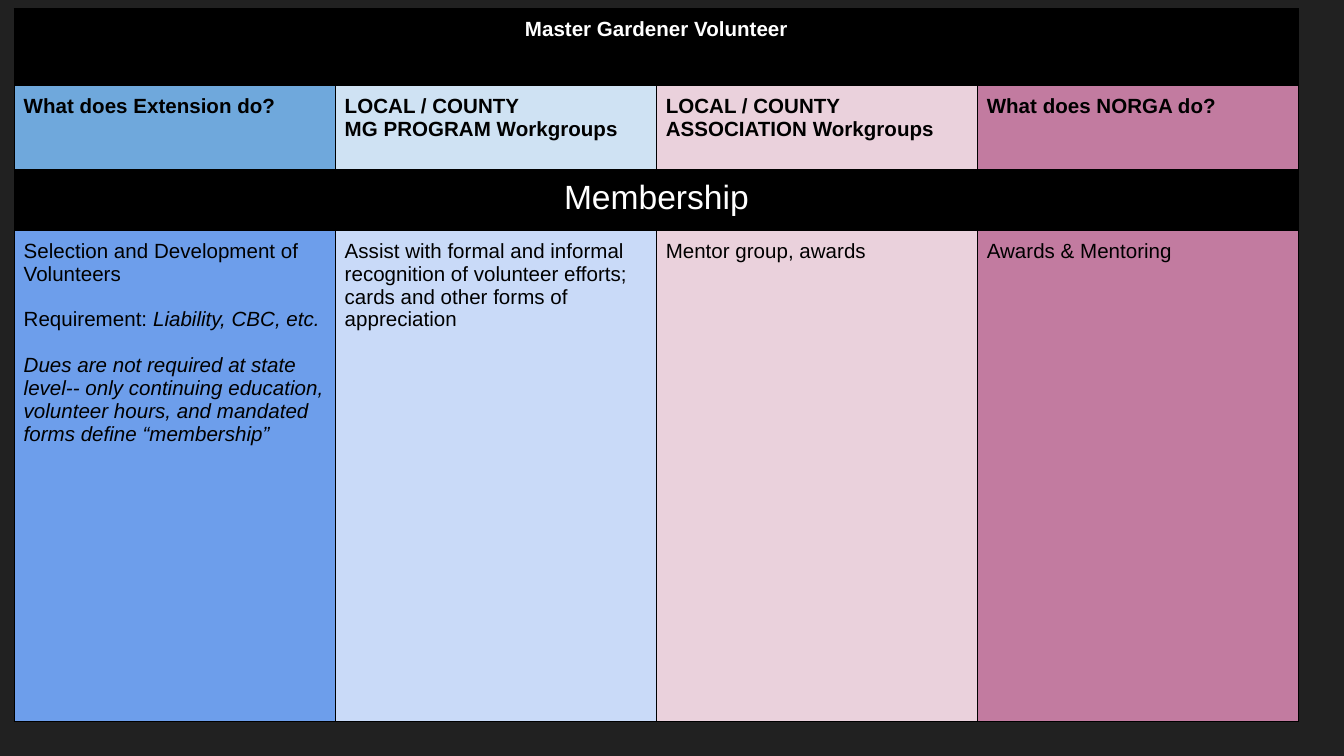
"""Build a table slide of who does what for garden volunteers."""
from dataclasses import dataclass

from lxml.etree import SubElement
from pptx import Presentation
from pptx.dml.color import RGBColor
from pptx.enum.text import PP_ALIGN
from pptx.oxml.ns import qn
from pptx.util import Pt


@dataclass(frozen=True)
class Theme:
    font: str = "Arial"
    back: str = "212121"
    black: str = "000000"
    white: str = "FFFFFF"
    heads: tuple = ("6FA8DC", "CFE2F3", "EAD1DC", "C27BA0")
    tasks: tuple = ("6D9EEB", "C9DAF8", "EAD1DC", "C27BA0")
    body: float = 11
    title: float = 18
    gap: float = 12.3
    inset: float = 5
    border: float = 1


THEME = Theme()
LEFT, TOP = 7.7, 4.8
WIDTH, COUNT = 172, 4
ROWS = (41, 45, 32.7, 263)

HEADS = (
    ("What does Extension do?",),
    ("LOCAL / COUNTY", "MG PROGRAM Workgroups"),
    ("LOCAL / COUNTY", "ASSOCIATION Workgroups"),
    ("What does NORGA do?",),
)
TASKS = (
    (
        (("Selection and Development of Volunteers", False),),
        (("Requirement: ", False), ("Liability, CBC, etc.", True)),
        (("Dues are not required at state level-- only continuing education, "
          "volunteer hours, and mandated forms define “membership”", True),),
    ),
    ((("Assist with formal and informal recognition of volunteer efforts; "
       "cards and other forms of appreciation", False),),),
    ((("Mentor group, awards", False),),),
    ((("Awards & Mentoring", False),),),
)


def paint(fill, color):
    """Give a fill one solid colour."""
    fill.solid()
    fill.fore_color.rgb = RGBColor.from_string(color)


def edge(cell):
    """Draw a line on all four sides of a cell."""
    props = cell._tc.get_or_add_tcPr()
    for spot, side in enumerate(("lnL", "lnR", "lnT", "lnB")):
        line = SubElement(props, qn(f"a:{side}"), w=str(Pt(THEME.border)))
        solid = SubElement(line, qn("a:solidFill"))
        SubElement(solid, qn("a:srgbClr"), val=THEME.black)
        props.insert(spot, line)


def dress(cell, color):
    """Set the fill, insets and borders of a cell."""
    paint(cell.fill, color)
    cell.margin_left = cell.margin_right = Pt(THEME.inset)
    cell.margin_top = cell.margin_bottom = Pt(THEME.inset)
    edge(cell)


def write(cell, paras, size=THEME.body, color=THEME.black,
          bold=False, align=PP_ALIGN.LEFT, gap=0):
    """Fill a cell with paragraphs of (text, italic) runs."""
    frame = cell.text_frame
    for spot, runs in enumerate(paras):
        para = frame.add_paragraph() if spot else frame.paragraphs[0]
        para.alignment = align
        para.space_before = Pt(gap if spot else 0)
        for text, slant in runs:
            run = para.add_run()
            run.text = text
            font = run.font
            font.name, font.size = THEME.font, Pt(size)
            font.bold, font.italic = bold, slant
            font.color.rgb = RGBColor.from_string(color)


def band(table, row, text, size, bold):
    """Make a black row with its label in the merged middle."""
    for col in range(COUNT):
        dress(table.cell(row, col), THEME.black)
    mid = table.cell(row, 1)
    mid.merge(table.cell(row, 2))
    write(mid, [[(text, False)]], size, THEME.white, bold, PP_ALIGN.CENTER)


def grid(slide):
    """Add the bare table with its row and column sizes."""
    table = slide.shapes.add_table(
        len(ROWS), COUNT, Pt(LEFT), Pt(TOP), Pt(WIDTH * COUNT), Pt(sum(ROWS))
    ).table
    table.first_row = table.horz_banding = False
    for col in table.columns:
        col.width = Pt(WIDTH)
    for row, height in zip(table.rows, ROWS):
        row.height = Pt(height)
    return table


def main():
    """Build and save the slide."""
    deck = Presentation()
    deck.slide_width, deck.slide_height = Pt(720), Pt(405)
    slide = deck.slides.add_slide(deck.slide_layouts[6])
    paint(slide.background.fill, THEME.back)
    table = grid(slide)
    band(table, 0, "Master Gardener Volunteer", THEME.body, True)
    band(table, 2, "Membership", THEME.title, False)
    for col in range(COUNT):
        head, task = table.cell(1, col), table.cell(3, col)
        dress(head, THEME.heads[col])
        write(head, [[(line, False)] for line in HEADS[col]], bold=True)
        dress(task, THEME.tasks[col])
        write(task, TASKS[col], gap=THEME.gap)
    deck.save("out.pptx")


if __name__ == "__main__":
    main()
